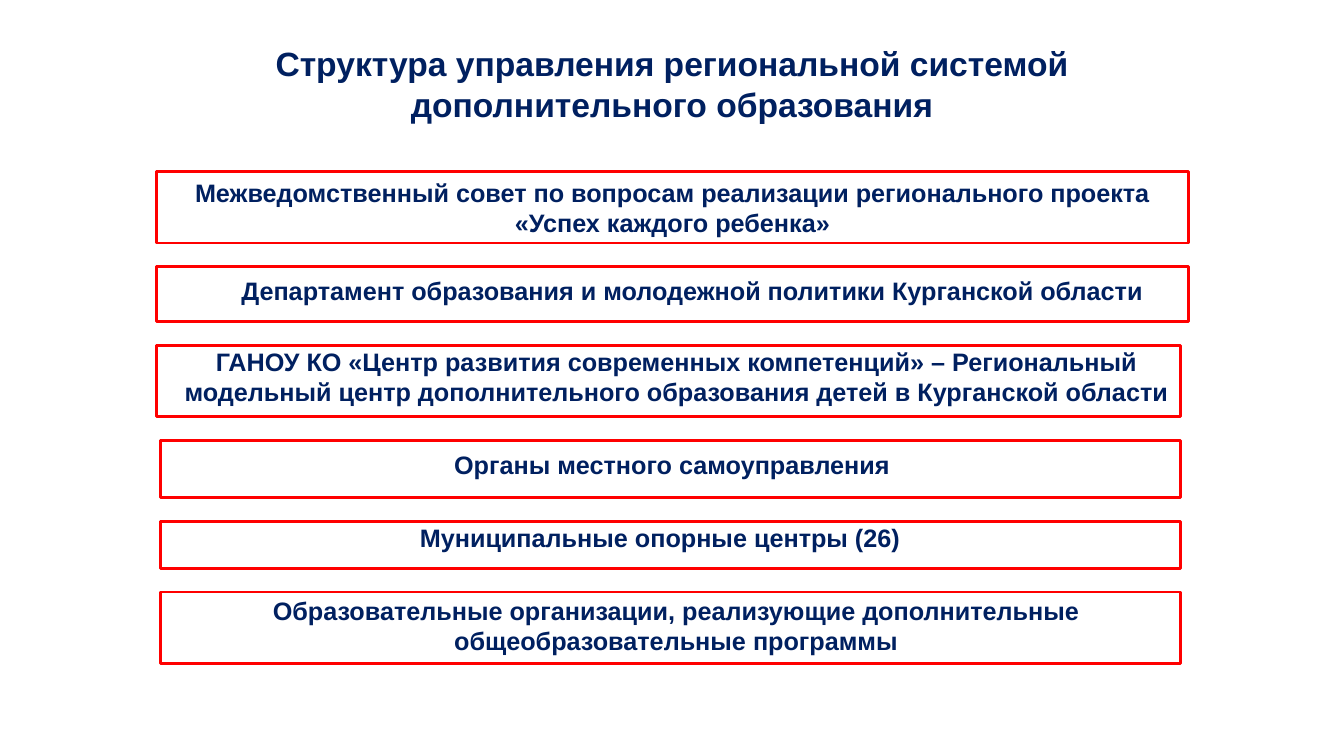
from dataclasses import dataclass

from pptx import Presentation, util as u
from pptx.dml.color import RGBColor
from pptx.enum import shapes, text


@dataclass(frozen=True)
class Theme:
    font: str = "Arial"
    ink: RGBColor = RGBColor(0x00, 0x20, 0x60)
    edge: RGBColor = RGBColor(0xFF, 0x00, 0x00)
    head: int = 24
    body: int = 18
    rule: int = 2


THEME = Theme()
WIDE, HIGH = u.Inches(13.33), u.Inches(7.5)
COL, ROW = WIDE / 100, HIGH / 100  # grid of 100 columns by 100 rows

TITLE = "Структура управления региональной системой\nдополнительного образования"
TITLE_BOX = (4.8, 5.07, 90.4, 12)
STACK_TOP, GAP = 22.67, 3.1
LINE, PAIR = 5.33, 9.47  # heights of one-line and two-line text

# text, frame (left, width, height), label (shift right, shift down, width, height)
LEVELS = [
    ("Межведомственный совет по вопросам реализации регионального проекта "
     "«Успех каждого ребенка»", (11.63, 76.82, PAIR), None),
    ("Департамент образования и молодежной политики Курганской области",
     (11.63, 76.82, 7.33), (4.73, 0.53, 70.29, LINE)),
    ("ГАНОУ КО «Центр развития современных компетенций» – Региональный "
     "модельный центр дополнительного образования детей в Курганской области",
     (11.63, 76.22, PAIR), (0.6, -0.53, 76.22, PAIR)),
    ("Органы местного самоуправления",
     (11.93, 75.92, 7.6), (2.93, 0.53, 70.29, LINE)),
    ("Муниципальные опорные центры (26)",
     (11.93, 75.92, 6.27), (2.03, -0.53, 70.29, LINE)),
    ("Образовательные организации, реализующие дополнительные "
     "общеобразовательные программы",
     (11.93, 75.92, PAIR), (3.23, -0.27, 70.29, PAIR)),
]


def place(left, top, width, height):
    """Turn grid units into slide lengths."""
    return [u.Emu(round(n)) for n in
            (left * COL, top * ROW, width * COL, height * ROW)]


def write(shape, words, size, anchor):
    frame = shape.text_frame
    frame.text = words
    frame.word_wrap = True
    frame.auto_size = text.MSO_AUTO_SIZE.NONE
    frame.vertical_anchor = anchor
    for para in frame.paragraphs:
        para.alignment = text.PP_ALIGN.CENTER
        for run in para.runs:
            run.font.name = THEME.font
            run.font.size = u.Pt(size)
            run.font.bold = True
            run.font.color.rgb = THEME.ink


def add_title(slide, box):
    title = slide.shapes.title
    title.left, title.top, title.width, title.height = place(*box)
    write(title, TITLE, THEME.head, text.MSO_ANCHOR.MIDDLE)


def add_level(slide, box, words, label):
    """Draw one framed level; its text sits in the frame or in a shifted label."""
    frame = slide.shapes.add_shape(shapes.MSO_SHAPE.RECTANGLE, *place(*box))
    frame.shadow.inherit = False
    frame.fill.background()
    frame.line.color.rgb = THEME.edge
    frame.line.width = u.Pt(THEME.rule)
    if label is None:
        write(frame, words, THEME.body, text.MSO_ANCHOR.MIDDLE)
        return
    right, down, width, height = label
    note = slide.shapes.add_textbox(
        *place(box[0] + right, box[1] + down, width, height))
    write(note, words, THEME.body, text.MSO_ANCHOR.TOP)


def add_stack(slide, top):
    for words, (left, width, height), label in LEVELS:
        add_level(slide, (left, top, width, height), words, label)
        top += height + GAP


def main():
    deck = Presentation()
    deck.slide_width, deck.slide_height = WIDE, HIGH
    slide = deck.slides.add_slide(deck.slide_layouts.get_by_name("Title Only"))
    add_title(slide, TITLE_BOX)
    add_stack(slide, STACK_TOP)
    deck.save("out.pptx")


if __name__ == "__main__":
    main()
